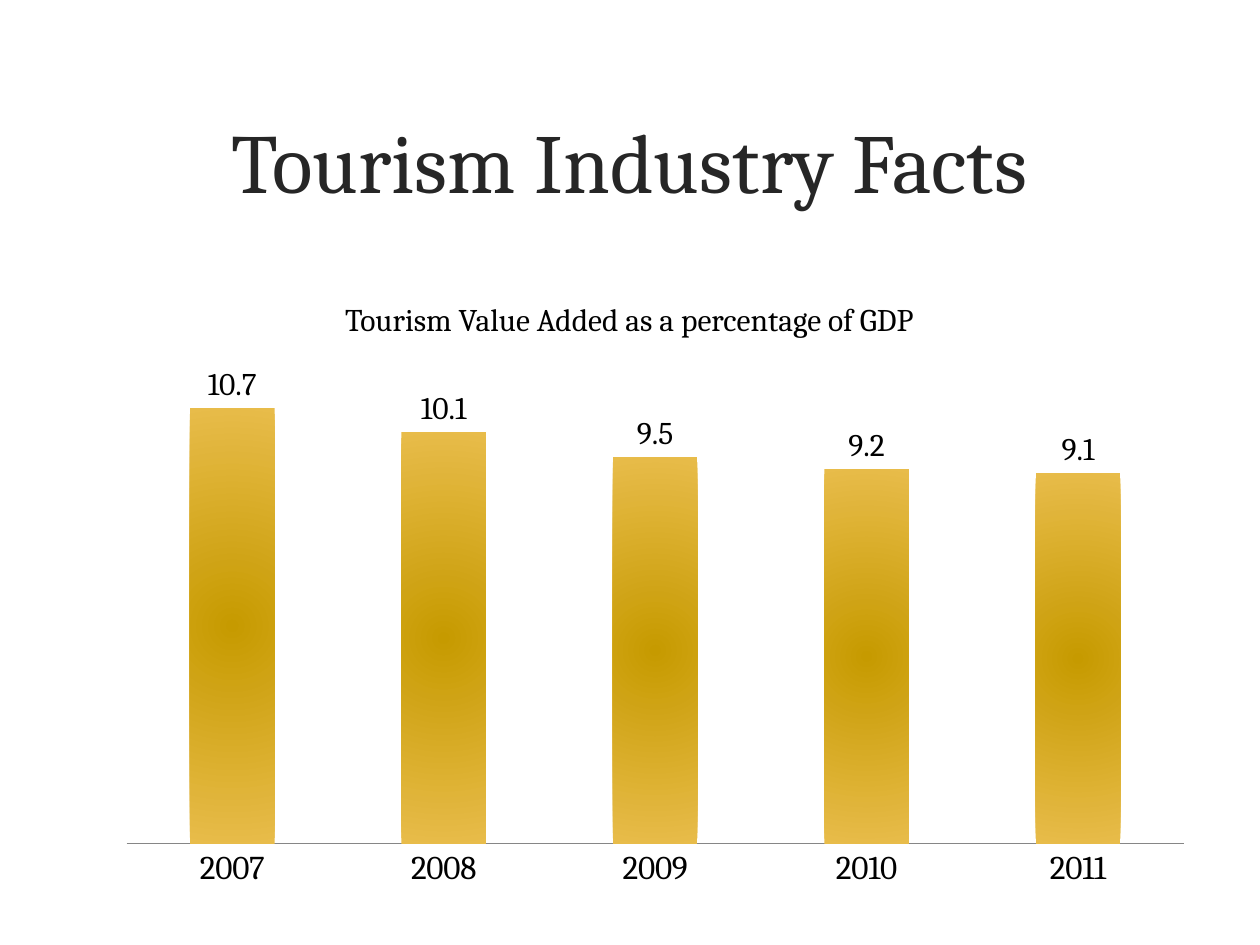
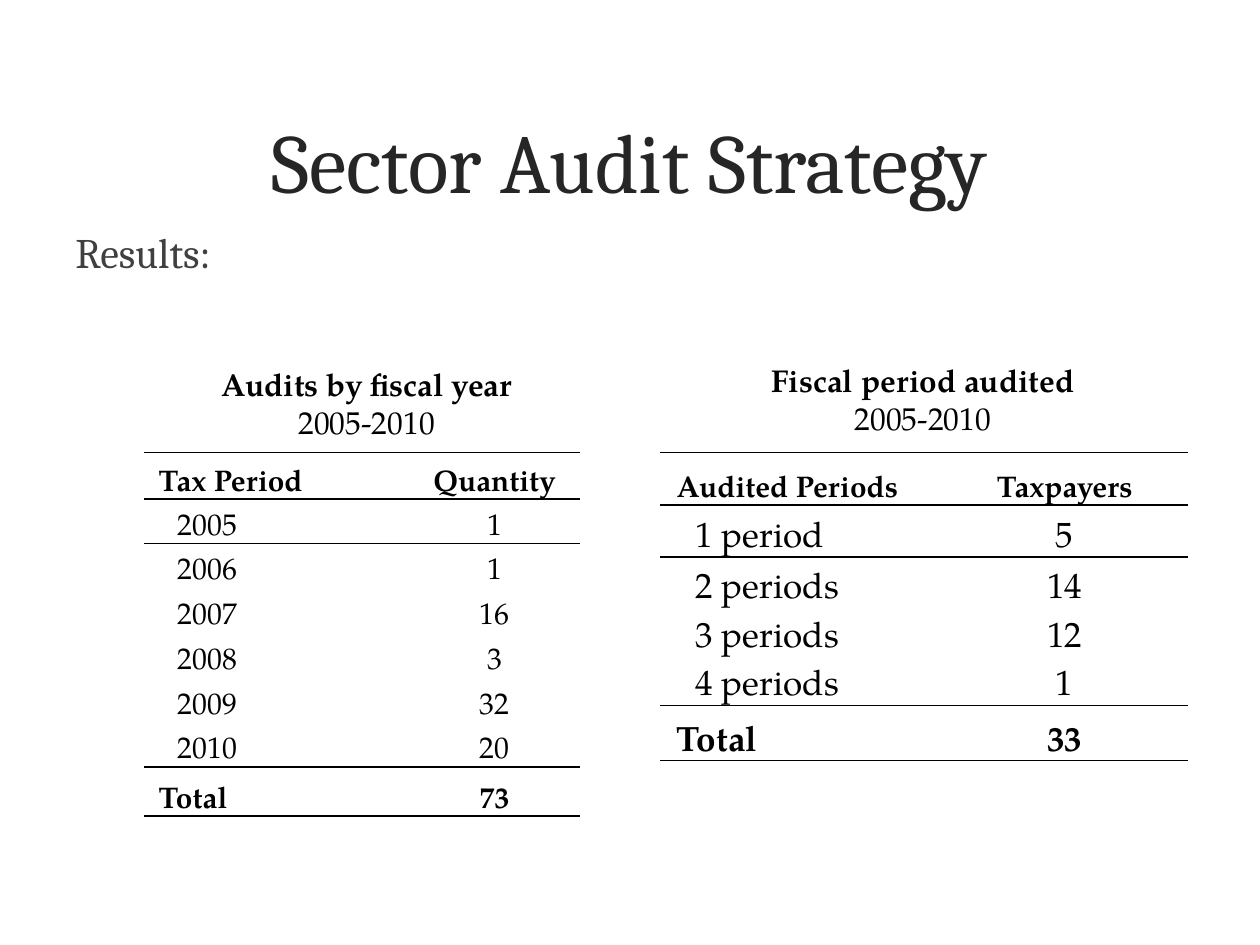
import pptx
import pptx.chart.data
import pptx.dml.color
import pptx.enum.chart
import pptx.enum.text
import pptx.oxml
import pptx.oxml.ns
import pptx.util
from pptx.util import Inches

COLORS = {
    "title": "262626", "body": "404040", "text": "000000",
    "axis": "868686", "bar_centre": "C69A00", "bar_edge": "E8BC4A",
}
SERIF = "Cambria"
TABLE_FONT = "TeX Gyre Pagella"
NO_GRID_STYLE = "{2D5ABB26-0587-4C30-8999-92F81FD0307C}"
ALIGN = pptx.enum.text.PP_ALIGN
ANCHOR = pptx.enum.text.MSO_ANCHOR
qn = pptx.oxml.ns.qn
NAMESPACE = pptx.oxml.ns.nsdecls("a")


def rgb(name):
    return pptx.dml.color.RGBColor.from_string(COLORS[name])


def style_font(font, size, color="text", face=SERIF, bold=False):
    font.size = pptx.util.Pt(size)
    font.name = face
    font.bold = bold
    font.color.rgb = rgb(color)


def add_page(deck, title):
    """Title-only page with the shared title style."""
    page = deck.slides.add_slide(deck.slide_layouts[5])
    box = page.shapes.title
    box.left, box.top = Inches(0.6), Inches(0.48)
    box.width, box.height = Inches(8.79), Inches(1.58)
    box.text_frame.text = title
    box.text_frame.vertical_anchor = ANCHOR.MIDDLE
    para = box.text_frame.paragraphs[0]
    para.alignment = ALIGN.CENTER
    style_font(para.runs[0].font, 48, "title")
    return page


def add_text(page, place, text, size, color="text", wrap=True):
    box = page.shapes.add_textbox(*map(Inches, place))
    box.text_frame.word_wrap = wrap
    box.text_frame.text = text
    style_font(box.text_frame.paragraphs[0].runs[0].font, size, color)


def add_caption(page, place, heading, years):
    """Centred table caption: bold heading over the years."""
    box = page.shapes.add_textbox(*map(Inches, place))
    frame = box.text_frame
    frame.word_wrap = True
    frame.vertical_anchor = ANCHOR.MIDDLE
    frame.text = f"{heading}\n{years}"
    for para, bold in zip(frame.paragraphs, (True, False)):
        para.alignment = ALIGN.CENTER
        style_font(para.runs[0].font, 18, face=TABLE_FONT, bold=bold)


def fill_bars(bars):
    """Gradient that spreads from the centre of each bar."""
    fill = bars.format.fill
    fill.gradient()
    for stop, color in zip(fill.gradient_stops, ("bar_centre", "bar_edge")):
        stop.color.rgb = rgb(color)
    gradient = bars._element.find(".//" + qn("a:gradFill"))
    gradient.remove(gradient.find(qn("a:lin")))
    gradient.append(pptx.oxml.parse_xml(
        f'<a:path {NAMESPACE} path="circle">'
        '<a:fillToRect l="50000" t="50000" r="50000" b="50000"/></a:path>'))


def set_plot_area(chart, x, y, w, h):
    """Fix the inner plot area, as fractions of the chart."""
    area = chart._chartSpace.chart.plotArea
    for layout in area.findall(qn("c:layout")):
        area.remove(layout)
    sizes = "".join(f'<c:{key} val="{value}"/>'
                    for key, value in zip("xywh", (x, y, w, h)))
    area.insert(0, pptx.oxml.parse_xml(
        f'<c:layout {pptx.oxml.ns.nsdecls("c")}><c:manualLayout>'
        '<c:layoutTarget val="inner"/><c:xMode val="edge"/><c:yMode val="edge"/>'
        f'{sizes}</c:manualLayout></c:layout>'))


def add_column_chart(page, place, years, shares):
    data = pptx.chart.data.CategoryChartData()
    data.categories = years
    data.add_series("Series 1", shares)
    kinds = pptx.enum.chart.XL_CHART_TYPE
    chart = page.shapes.add_chart(
        kinds.COLUMN_CLUSTERED, *map(Inches, place), data).chart
    chart.has_legend = False
    chart.has_title = False
    style_font(chart.font, 10)
    set_plot_area(chart, 0.02, 0.02, 0.96, 0.88)

    # Axes
    ticks = pptx.enum.chart.XL_TICK_MARK
    year_axis, share_axis = chart.category_axis, chart.value_axis
    year_axis.major_tick_mark = ticks.NONE
    year_axis.format.line.color.rgb = rgb("axis")
    style_font(year_axis.tick_labels.font, 19)
    share_axis.minimum_scale, share_axis.maximum_scale = 0, 12
    share_axis.has_major_gridlines = False
    share_axis.visible = False

    # Bars and their values
    plot = chart.plots[0]
    plot.vary_by_categories = False
    plot.gap_width, plot.overlap = 150, -25
    fill_bars(plot.series[0])
    plot.has_data_labels = True
    labels = plot.data_labels
    labels.show_value = True
    labels.position = pptx.enum.chart.XL_LABEL_POSITION.OUTSIDE_END
    style_font(labels.font, 18)


def add_cell_line(cell, side):
    cell._tc.get_or_add_tcPr().append(pptx.oxml.parse_xml(
        f'<a:ln{side} {NAMESPACE} w="12700"><a:solidFill>'
        f'<a:srgbClr val="{COLORS["text"]}"/></a:solidFill></a:ln{side}>'))


def add_ruled_table(page, place, widths, heights, rows, sizes, inset):
    """Table ruled around its header and total; sizes: header, body, total label, total."""
    shape = page.shapes.add_table(len(rows), len(widths), *map(Inches, place))
    table = shape.table
    table.first_row = table.horz_banding = False
    table._tbl.tblPr.find(qn("a:tableStyleId")).text = NO_GRID_STYLE
    for column, width in zip(table.columns, widths):
        column.width = Inches(width)
    last = len(rows) - 1
    for i, (label, count) in enumerate(rows):
        table.rows[i].height = Inches(heights[i])
        strong = i in (0, last)
        for j, text in enumerate((label, count)):
            cell = table.cell(i, j)
            if i in (0, 1, last):
                add_cell_line(cell, "T")
            if i in (0, last - 1, last):
                add_cell_line(cell, "B")
            cell.fill.background()
            cell.vertical_anchor = ANCHOR.BOTTOM
            cell.margin_left = cell.margin_right = Inches(inset)
            cell.margin_top = cell.margin_bottom = 0
            cell.text_frame.text = text
            para = cell.text_frame.paragraphs[0]
            para.line_spacing = 1.15
            if j == 1:
                para.alignment = ALIGN.CENTER
            elif not strong:
                para._p.get_or_add_pPr().set("indent", str(Inches(0.15)))
            style_font(para.runs[0].font, sizes[0] if i == 0 else sizes[1],
                       face=TABLE_FONT, bold=strong)


def build_facts(deck):
    page = add_page(deck, "Tourism Industry Facts")
    add_column_chart(page, (0.83, 2.73, 8.74, 4.41),
                     ["2007", "2008", "2009", "2010", "2011"],
                     [10.7, 10.1, 9.5, 9.2, 9.1])
    add_text(page, (2.64, 2.33, 5.06, 0.4),
             "Tourism Value Added as a percentage of GDP", 18, wrap=False)


def build_results(deck):
    page = add_page(deck, "Sector Audit Strategy")
    add_text(page, (0.5, 1.75, 9, 0.74), "Results:", 24, "body")

    # Audits by fiscal year
    audits = [("Tax Period", "Quantity"), ("2005", "1"), ("2006", "1"),
              ("2007", "16"), ("2008", "3"), ("2009", "32"), ("2010", "20"),
              ("Total", "73")]
    add_ruled_table(page, (1.14, 3.59, 3.46, 2.89), (2.11, 1.35),
                    [0.37] + [2.13 / 6] * 6 + [0.39], audits, (17, 17), 0.12)
    add_caption(page, (1.14, 2.84, 3.54, 0.71), "Audits by fiscal year", "2005-2010")

    # Taxpayers by number of audited periods
    periods = [("Audited Periods", "Taxpayers"), ("1 period", "5"),
               ("2 periods", "14"), ("3 periods", "12"), ("4 periods", "1"),
               ("Total", "33")]
    add_ruled_table(page, (5.24, 3.59, 4.19, 2.45), (2.23, 1.96),
                    [0.42, 0.41, 0.41, 0.38, 0.38, 0.44], periods, (17, 20), 0.13)
    add_caption(page, (5.24, 2.81, 4.17, 0.71), "Fiscal period audited", "2005-2010")


def main():
    deck = pptx.Presentation()
    deck.slide_width, deck.slide_height = Inches(10), Inches(7.5)
    build_facts(deck)
    build_results(deck)
    deck.save("out.pptx")


if __name__ == "__main__":
    main()
